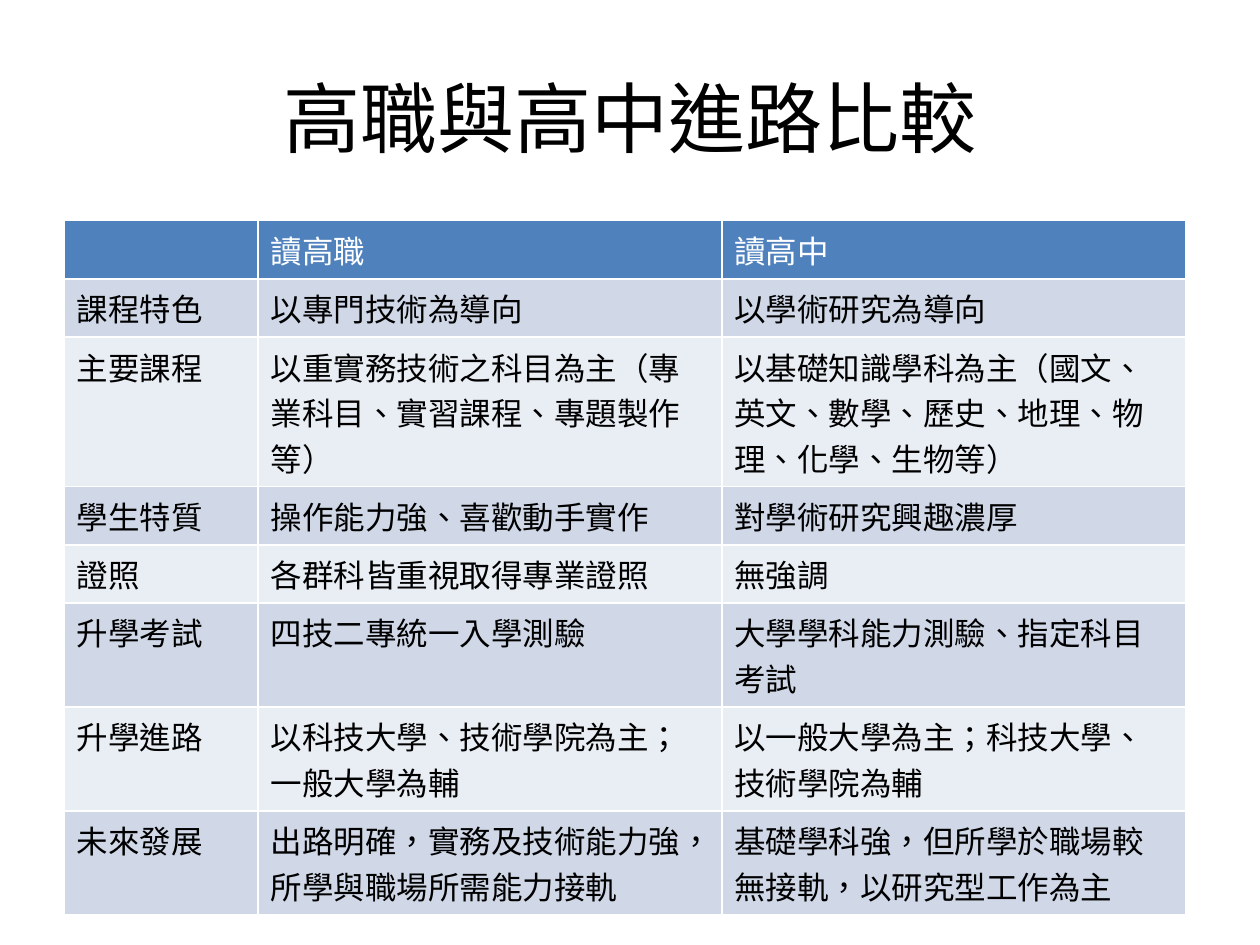
"""Build a slide that compares vocational and general high school."""
from typing import Any, NamedTuple

from pptx import Presentation
from pptx.dml.color import RGBColor as Rgb
from pptx.enum.lang import MSO_LANGUAGE_ID as Lang
from pptx.enum.text import MSO_ANCHOR as Anchor, PP_ALIGN as Align
from pptx.util import Cm, Pt

FONT = {"name": "DejaVu Sans Mono", "bold": False,
        "language_id": Lang.TRADITIONAL_CHINESE}
HEAD = "4F81BD"
BANDS = ("D0D8E8", "E9EDF4")
WIDTHS = (3.91, 9.35, 9.35)
HIGH = 1.03


class Row(NamedTuple):
    topic: str
    trade: str
    general: str


ROWS = (
    Row("", "讀高職", "讀高中"),
    Row("課程特色", "以專門技術為導向", "以學術研究為導向"),
    Row("主要課程", "以重實務技術之科目為主（專業科目、實習課程、專題製作等）",
        "以基礎知識學科為主（國文、英文、數學、歷史、地理、物理、化學、生物等）"),
    Row("學生特質", "操作能力強、喜歡動手實作", "對學術研究興趣濃厚"),
    Row("證照", "各群科皆重視取得專業證照", "無強調"),
    Row("升學考試", "四技二專統一入學測驗", "大學學科能力測驗、指定科目考試"),
    Row("升學進路", "以科技大學、技術學院為主；一般大學為輔",
        "以一般大學為主；科技大學、技術學院為輔"),
    Row("未來發展", "出路明確，實務及技術能力強，所學與職場所需能力接軌",
        "基礎學科強，但所學於職場較無接軌，以研究型工作為主"),
)


def tint(target: Any, code: str) -> None:
    target.rgb = Rgb.from_string(code)


def apply(target: Any, values: dict[str, Any]) -> None:
    for key, value in values.items():
        setattr(target, key, value)


def write(frame: Any, text: str, size: int, color: str) -> None:
    run = frame.paragraphs[0].add_run()
    run.text = text
    apply(run.font, FONT | {"size": Pt(size)})
    tint(run.font.color, color)


def add_title(slide: Any, text: str) -> None:
    title = slide.shapes.title
    apply(title, {"left": Cm(1.27), "top": Cm(0.76),
                  "width": Cm(22.86), "height": Cm(3.18)})
    frame = title.text_frame
    frame.vertical_anchor = Anchor.MIDDLE
    write(frame, text, 44, "000000")
    frame.paragraphs[0].alignment = Align.CENTER


def add_grid(slide: Any, rows: tuple[Row, ...]) -> None:
    table = slide.shapes.add_table(
        len(rows), len(WIDTHS), Cm(1.29), Cm(4.45),
        Cm(sum(WIDTHS)), Cm(HIGH * len(rows))).table
    for col, width in zip(table.columns, WIDTHS):
        col.width = Cm(width)
    for i, row in enumerate(rows):
        fill = BANDS[(i - 1) % 2] if i else HEAD
        for j, text in enumerate(row):
            cell = table.cell(i, j)
            cell.fill.solid()
            tint(cell.fill.fore_color, fill)
            if text:
                write(cell.text_frame, text, 18, "000000" if i else "FFFFFF")


def main() -> None:
    deck = Presentation()
    apply(deck, {"slide_width": Cm(25.4), "slide_height": Cm(19.05)})
    slide = deck.slides.add_slide(deck.slide_layouts[5])
    add_title(slide, "高職與高中進路比較")
    add_grid(slide, ROWS)
    deck.save("out.pptx")


if __name__ == "__main__":
    main()
